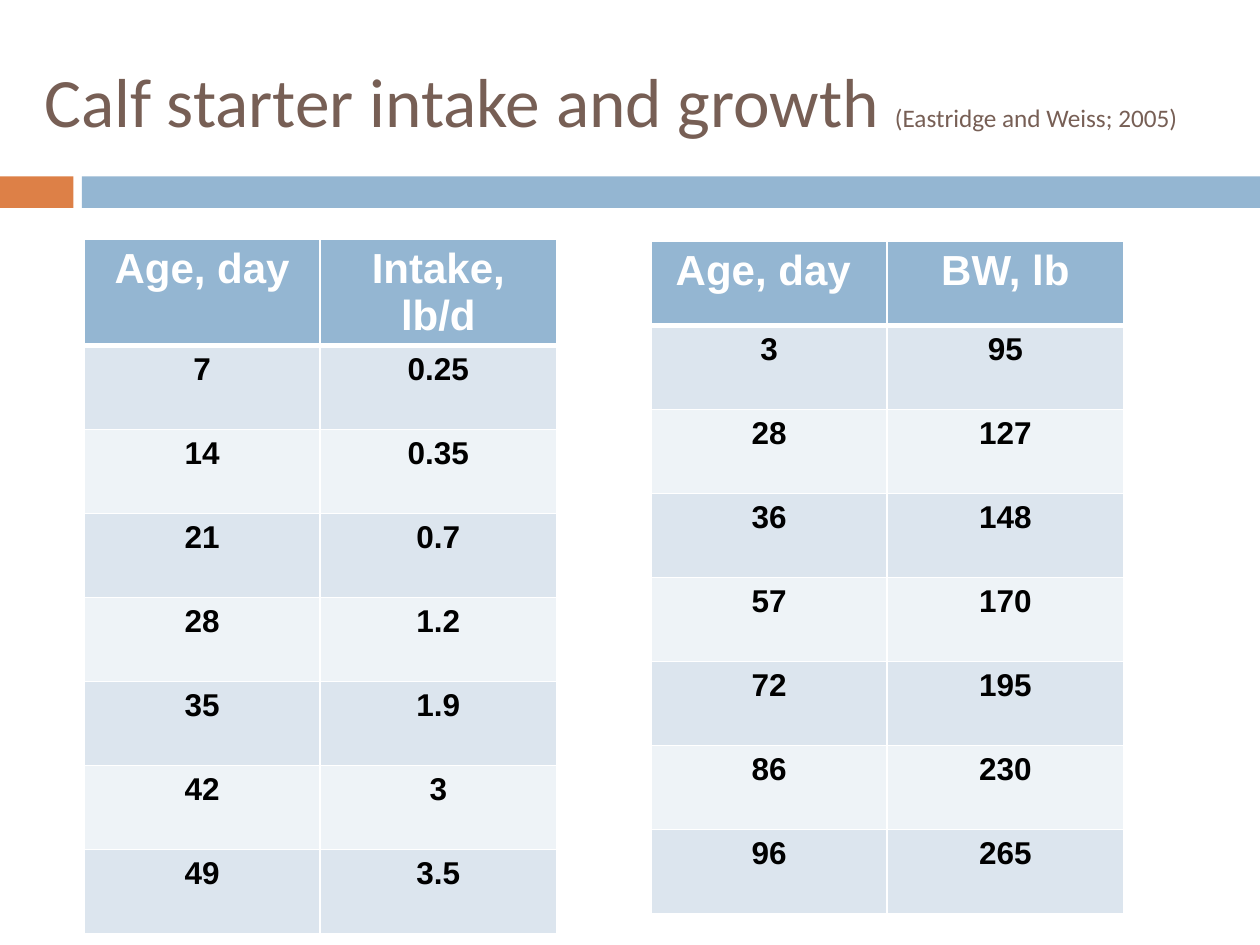
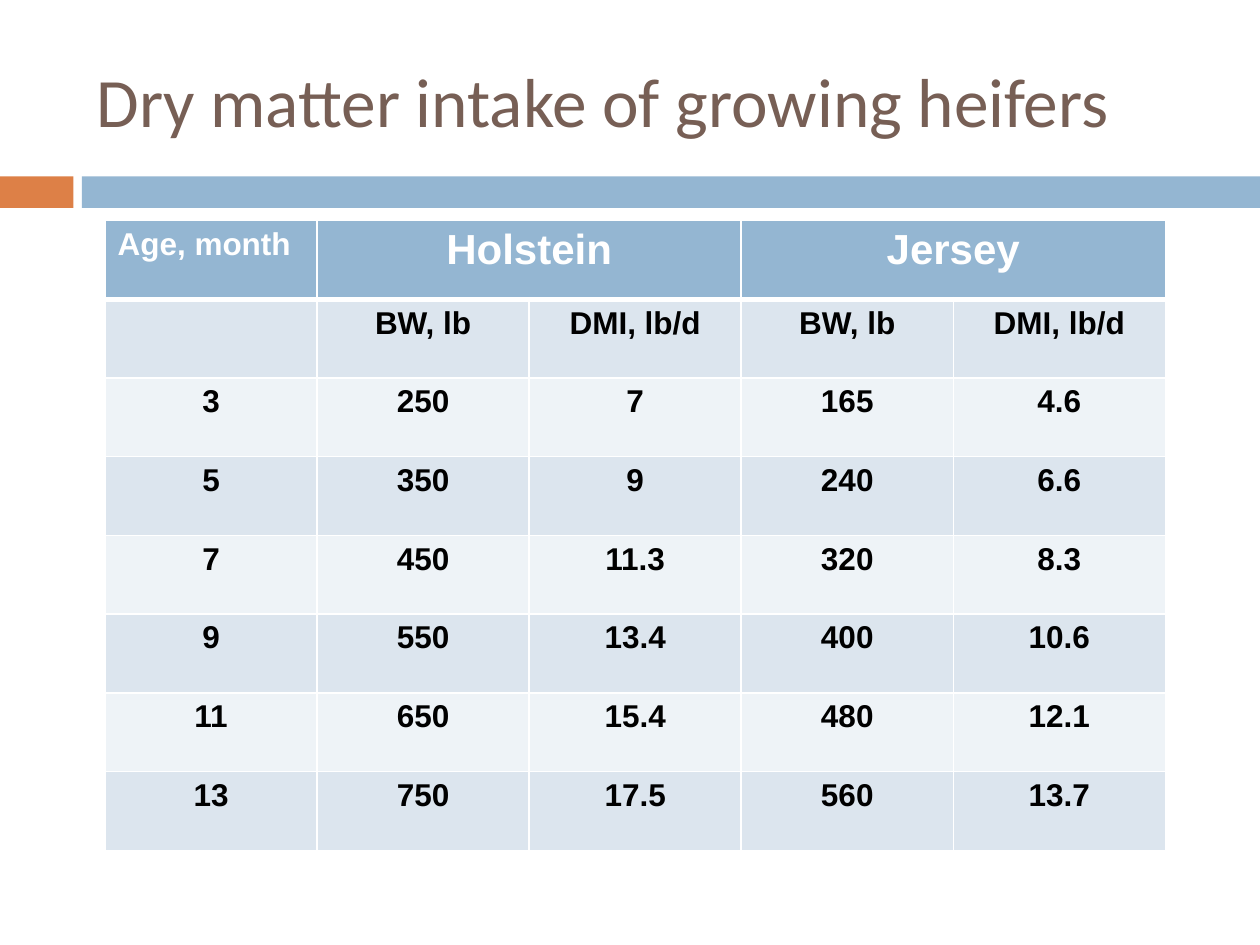
from pptx import Presentation
from pptx.dml.color import RGBColor
from pptx.enum.shapes import MSO_SHAPE as SHAPE
from pptx.enum.text import MSO_ANCHOR as ANCHOR, MSO_AUTO_SIZE as AUTO, PP_ALIGN as ALIGN
from pptx.oxml.ns import qn
from pptx.util import Inches, Pt
from lxml.etree import SubElement

# Shared look
BROWN = RGBColor(0x77, 0x5F, 0x55)
ORANGE = RGBColor(0xDD, 0x80, 0x47)
BLUE = RGBColor(0x94, 0xB6, 0xD2)
BAND_DARK = RGBColor(0xDC, 0xE5, 0xEE)
BAND_LIGHT = RGBColor(0xEE, 0xF3, 0xF7)
WHITE = RGBColor(0xFF, 0xFF, 0xFF)
BLACK = RGBColor(0, 0, 0)

TITLE_FONT = dict(name="Calibri", size=Pt(39.6), bold=False)
SOURCE_FONT = dict(TITLE_FONT, size=Pt(14.4))
HEAD_FONT = dict(name="Arial", size=Pt(24), bold=True)
BODY_FONT = dict(HEAD_FONT, size=Pt(18))

# The slide is a grid of 120 columns by 90 rows
COLS, ROWS = 120, 90
SLIDE_W, SLIDE_H = Inches(10), Inches(7.5)

CALF_INTAKE = [
    ("Age, day", "Intake, lb/d"),
    ("7", "0.25"), ("14", "0.35"), ("21", "0.7"), ("28", "1.2"),
    ("35", "1.9"), ("42", "3"), ("49", "3.5"),
]
CALF_GROWTH = [
    ("Age, day ", "BW, lb"),
    ("3", "95"), ("28", "127"), ("36", "148"), ("57", "170"),
    ("72", "195"), ("86", "230"), ("96", "265"),
]
# None continues the cell on its left
HEIFER_INTAKE = [
    ("Age, month", "Holstein", None, "Jersey", None),
    ("", "BW, lb", "DMI, lb/d", "BW, lb", "DMI, lb/d"),
    ("3", "250", "7", "165", "4.6"),
    ("5", "350", "9", "240", "6.6"),
    ("7", "450", "11.3", "320", "8.3"),
    ("9", "550", "13.4", "400", "10.6"),
    ("11", "650", "15.4", "480", "12.1"),
    ("13", "750", "17.5", "560", "13.7"),
]


def grid(left, top, width, height):
    """Turn grid columns and rows into slide lengths."""
    return (int(SLIDE_W * left / COLS), int(SLIDE_H * top / ROWS),
            int(SLIDE_W * width / COLS), int(SLIDE_H * height / ROWS))


def add_run(p, text, color, font):
    r = p.add_run()
    r.text = text
    r.font.color.rgb = color
    for key, value in font.items():
        setattr(r.font, key, value)
    return r


def add_band(s, left, width, color):
    sp = s.shapes.add_shape(SHAPE.RECTANGLE, *grid(left, 16.8, width, 3))
    sp.shadow.inherit = False
    sp.fill.solid()
    sp.fill.fore_color.rgb = color
    sp.line.fill.background()


def add_titled_slide(prs, left, width, title, source=None):
    s = prs.slides.add_slide(prs.slide_layouts[5])
    add_band(s, 0, 7, ORANGE)
    add_band(s, 7.8, COLS - 7.8, BLUE)
    sp = s.shapes.title
    sp.left, sp.top, sp.width, sp.height = grid(left, 3, width, 13)
    tf = sp.text_frame
    for key, value in dict(word_wrap=True, auto_size=AUTO.NONE,
                           vertical_anchor=ANCHOR.MIDDLE).items():
        setattr(tf, key, value)
    p = tf.paragraphs[0]
    p.alignment = ALIGN.LEFT
    add_run(p, title, BROWN, TITLE_FONT)
    if source:
        add_run(p, source, BROWN, SOURCE_FONT)
    return s


def set_borders(cell, top, bottom):
    tc_pr = cell._tc.get_or_add_tcPr()
    for side, points in dict(lnL=1, lnR=1, lnT=top, lnB=bottom).items():
        line = SubElement(tc_pr, qn(f"a:{side}"), w=str(Pt(points)))
        fill = SubElement(line, qn("a:solidFill"))
        SubElement(fill, qn("a:srgbClr"), val=str(WHITE))


def format_cell(cell, row):
    """Header row is blue over a thick rule; body rows alternate."""
    set_borders(cell, top=3 if row == 1 else 1, bottom=3 if row == 0 else 1)
    cell.fill.solid()
    bands = (BAND_LIGHT, BAND_DARK)
    cell.fill.fore_color.rgb = bands[row % 2] if row else BLUE


def add_data_table(s, data, left, top, width, height, small_corner=False):
    n_rows, n_cols = len(data), len(data[0])
    box = grid(left, top, width, height)
    table = s.shapes.add_table(n_rows, n_cols, *box).table
    for column in table.columns:
        column.width = box[2] // n_cols
    for i, values in enumerate(data):
        table.rows[i].height = box[3] // n_rows
        for j, text in enumerate(values):
            cell = table.cell(i, j)
            format_cell(cell, i)
            if text is None:
                table.cell(i, j - 1).merge(cell)
                continue
            corner = small_corner and i == j == 0
            p = cell.text_frame.paragraphs[0]
            p.alignment = ALIGN.LEFT if corner else ALIGN.CENTER
            if text:
                add_run(p, text, BLACK if i else WHITE,
                        BODY_FONT if i or corner else HEAD_FONT)


def main():
    prs = Presentation()
    prs.slide_width, prs.slide_height = SLIDE_W, SLIDE_H

    # Calves: starter intake beside body weight
    s = add_titled_slide(prs, 3, 112, "Calf starter intake and growth ",
                         "(Eastridge and Weiss; 2005)")
    add_data_table(s, CALF_INTAKE, 8, 22.8, 45, 64)
    add_data_table(s, CALF_GROWTH, 62, 23, 45, 64)

    # Heifers: two breeds in one table
    s = add_titled_slide(prs, 8, 107, "Dry matter intake of growing heifers")
    add_data_table(s, HEIFER_INTAKE, 10, 21, 101, 60, small_corner=True)

    prs.save("out.pptx")


if __name__ == "__main__":
    main()
